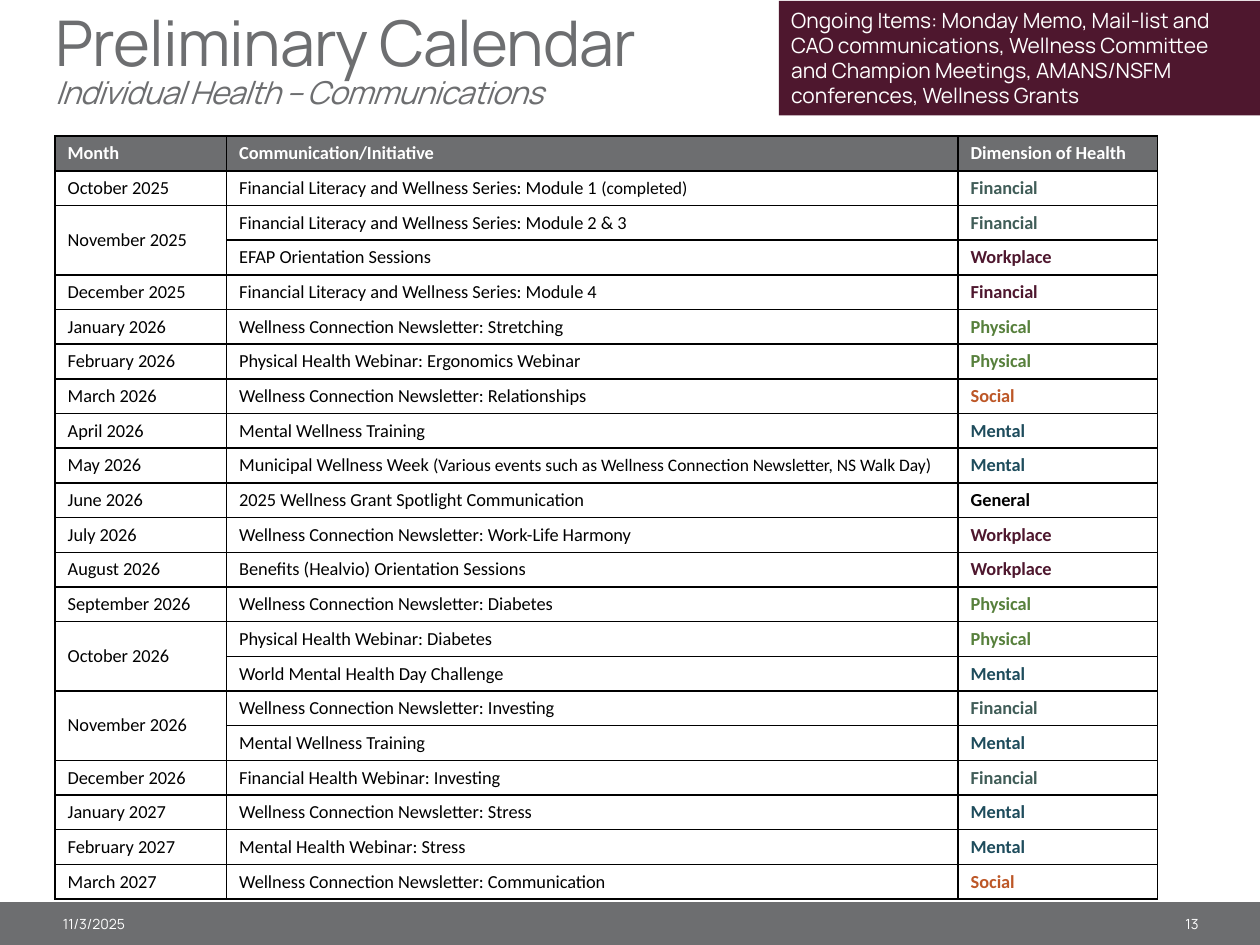
from lxml.etree import SubElement
from pptx import Presentation
from pptx.dml.color import RGBColor
from pptx.enum.shapes import MSO_SHAPE
from pptx.enum.text import MSO_ANCHOR, PP_ALIGN
from pptx.oxml.ns import qn
from pptx.util import Pt

WHITE = RGBColor(0xFF, 0xFF, 0xFF)
BLACK = RGBColor(0, 0, 0)
GREY = RGBColor(0x6D, 0x6E, 0x70)
WINE = RGBColor(0x4E, 0x17, 0x2E)
TEAL = RGBColor(0x40, 0x5D, 0x58)
GREEN = RGBColor(0x57, 0x80, 0x3C)
ORANGE = RGBColor(0xBD, 0x57, 0x27)
BLUE = RGBColor(0x1E, 0x4C, 0x5C)

DIMENSION_COLORS = {
    "Financial": TEAL,
    "Workplace": WINE,
    "Physical": GREEN,
    "Social": ORANGE,
    "Mental": BLUE,
    "General": BLACK,
}
HEADINGS = ("Month", "Communication/Initiative", "Dimension of Health")
CALENDAR = [
    ("October 2025", [("Financial Literacy and Wellness Series: Module 1 |(completed)", "Financial")]),
    ("November 2025", [("Financial Literacy and Wellness Series: Module 2 & 3", "Financial"),
                       ("EFAP Orientation Sessions", "Workplace")]),
    ("December 2025", [("Financial Literacy and Wellness Series: Module 4", "Financial")]),
    ("January 2026", [("Wellness Connection Newsletter: Stretching", "Physical")]),
    ("February 2026", [("Physical Health Webinar: Ergonomics Webinar", "Physical")]),
    ("March 2026", [("Wellness Connection Newsletter: Relationships", "Social")]),
    ("April 2026", [("Mental Wellness Training", "Mental")]),
    ("May 2026", [("Municipal Wellness Week |(Various events such as Wellness Connection Newsletter, NS Walk Day)",
                   "Mental")]),
    ("June 2026", [("2025 Wellness Grant Spotlight Communication", "General")]),
    ("July 2026", [("Wellness Connection Newsletter: Work-Life Harmony", "Workplace")]),
    ("August 2026", [("Benefits (Healvio) Orientation Sessions", "Workplace")]),
    ("September 2026", [("Wellness Connection Newsletter: Diabetes", "Physical")]),
    ("October 2026", [("Physical Health Webinar: Diabetes", "Physical"),
                      ("World Mental Health Day Challenge", "Mental")]),
    ("November 2026", [("Wellness Connection Newsletter: Investing", "Financial"),
                       ("Mental Wellness Training", "Mental")]),
    ("December 2026", [("Financial Health Webinar: Investing", "Financial")]),
    ("January 2027", [("Wellness Connection Newsletter: Stress", "Mental")]),
    ("February 2027", [("Mental Health Webinar: Stress", "Mental")]),
    ("March 2027", [("Wellness Connection Newsletter: Communication", "Social")]),
]
WINE_FINANCIAL_MONTH = "December 2025"


def write(para, text, size=10.5, font="Calibri", color=BLACK, bold=False,
          italic=False, align=PP_ALIGN.LEFT, tracking=None):
    para.alignment = align
    span = para.add_run()
    span.text = text
    span.font.size = Pt(size)
    span.font.name = font
    span.font.color.rgb = color
    span.font.bold = bold
    span.font.italic = italic
    if tracking is not None:
        span._r.get_or_add_rPr().set("spc", str(int(tracking * 100)))


def add_block(page, left, top, width, height, color):
    block = page.shapes.add_shape(MSO_SHAPE.RECTANGLE, Pt(left), Pt(top), Pt(width), Pt(height))
    block.shadow.inherit = False
    block.fill.solid()
    block.fill.fore_color.rgb = color
    block.line.fill.background()
    return block


def add_text_box(page, left, top, width, height, anchor=MSO_ANCHOR.TOP):
    box = page.shapes.add_textbox(Pt(left), Pt(top), Pt(width), Pt(height))
    box.text_frame.word_wrap = True
    box.text_frame.vertical_anchor = anchor
    return box.text_frame


def add_footer(page, left, top, width, height):
    add_block(page, left, top, width, height, GREY)
    style = {"size": 8, "font": "Manrope", "color": WHITE}
    date = add_text_box(page, left + 28.8, top + 1.4, 146, 22.3, MSO_ANCHOR.MIDDLE)
    write(date.paragraphs[0], "11/3/2025", **style)
    number = add_text_box(page, left + width - 105.8, top + 1.4, 77.8, 22.3, MSO_ANCHOR.MIDDLE)
    write(number.paragraphs[0], "13", align=PP_ALIGN.RIGHT, **style)


def add_heading(page, left, top, width, height):
    frame = add_text_box(page, left, top, width, height)
    style = {"font": "Manrope", "color": GREY, "tracking": -0.5}
    title, subtitle = frame.paragraphs[0], frame.add_paragraph()
    title.line_spacing = subtitle.line_spacing = 0.85
    write(title, "Preliminary Calendar", size=36, **style)
    write(subtitle, "Individual Health – Communications", size=18, italic=True, **style)


def add_banner(page, left, top, width, height):
    frame = add_block(page, left, top, width, height, WINE).text_frame
    frame.word_wrap = True
    frame.vertical_anchor = MSO_ANCHOR.TOP
    write(frame.paragraphs[0],
          "Ongoing Items: Monday Memo, Mail-list and CAO communications, Wellness Committee "
          "and Champion Meetings, AMANS/NSFM conferences, Wellness Grants",
          size=12, font="Manrope", color=WHITE)


def format_cell(cell, fill):
    properties = cell._tc.get_or_add_tcPr()
    for side in ("a:lnL", "a:lnR", "a:lnT", "a:lnB"):
        line = SubElement(properties, qn(side), w=str(Pt(1)))
        SubElement(SubElement(line, qn("a:solidFill")), qn("a:srgbClr"), val=str(BLACK))
    cell.fill.solid()
    cell.fill.fore_color.rgb = fill


def add_calendar(page, left, top, column_widths, row_height):
    row_count = 1 + sum(len(items) for month, items in CALENDAR)
    table = page.shapes.add_table(row_count, len(HEADINGS), Pt(left), Pt(top),
                                  Pt(sum(column_widths)), Pt(row_height * row_count)).table
    for column, width in zip(table.columns, column_widths):
        column.width = Pt(width)
    for index, row in enumerate(table.rows):
        row.height = Pt(row_height)
        for cell in row.cells:
            format_cell(cell, WHITE if index else GREY)
    for index, heading in enumerate(HEADINGS):
        write(table.cell(0, index).text_frame.paragraphs[0], heading, color=WHITE, bold=True)

    first = 1
    for month, items in CALENDAR:
        month_cell = table.cell(first, 0)
        if len(items) > 1:
            month_cell.merge(table.cell(first + len(items) - 1, 0))
            month_cell.vertical_anchor = MSO_ANCHOR.MIDDLE
        write(month_cell.text_frame.paragraphs[0], month)
        for row, (initiative, dimension) in enumerate(items, first):
            name, _, remark = initiative.partition("|")
            para = table.cell(row, 1).text_frame.paragraphs[0]
            write(para, name)
            if remark:
                write(para, remark, size=10)
            color = WINE if month == WINE_FINANCIAL_MONTH else DIMENSION_COLORS[dimension]
            write(table.cell(row, 2).text_frame.paragraphs[0], dimension, color=color, bold=True)
        first += len(items)


def main():
    deck = Presentation()
    deck.slide_width, deck.slide_height = Pt(720), Pt(540)
    page = deck.slides.add_slide(deck.slide_layouts[6])
    add_footer(page, 0, 515.5, 720, 24.5)
    add_heading(page, 24.5, 5, 695.5, 59)
    add_calendar(page, 31.5, 77.8, (98, 418, 114), 19.8)
    add_banner(page, 445, 0.5, 275, 65.5)
    deck.save("out.pptx")


if __name__ == "__main__":
    main()
